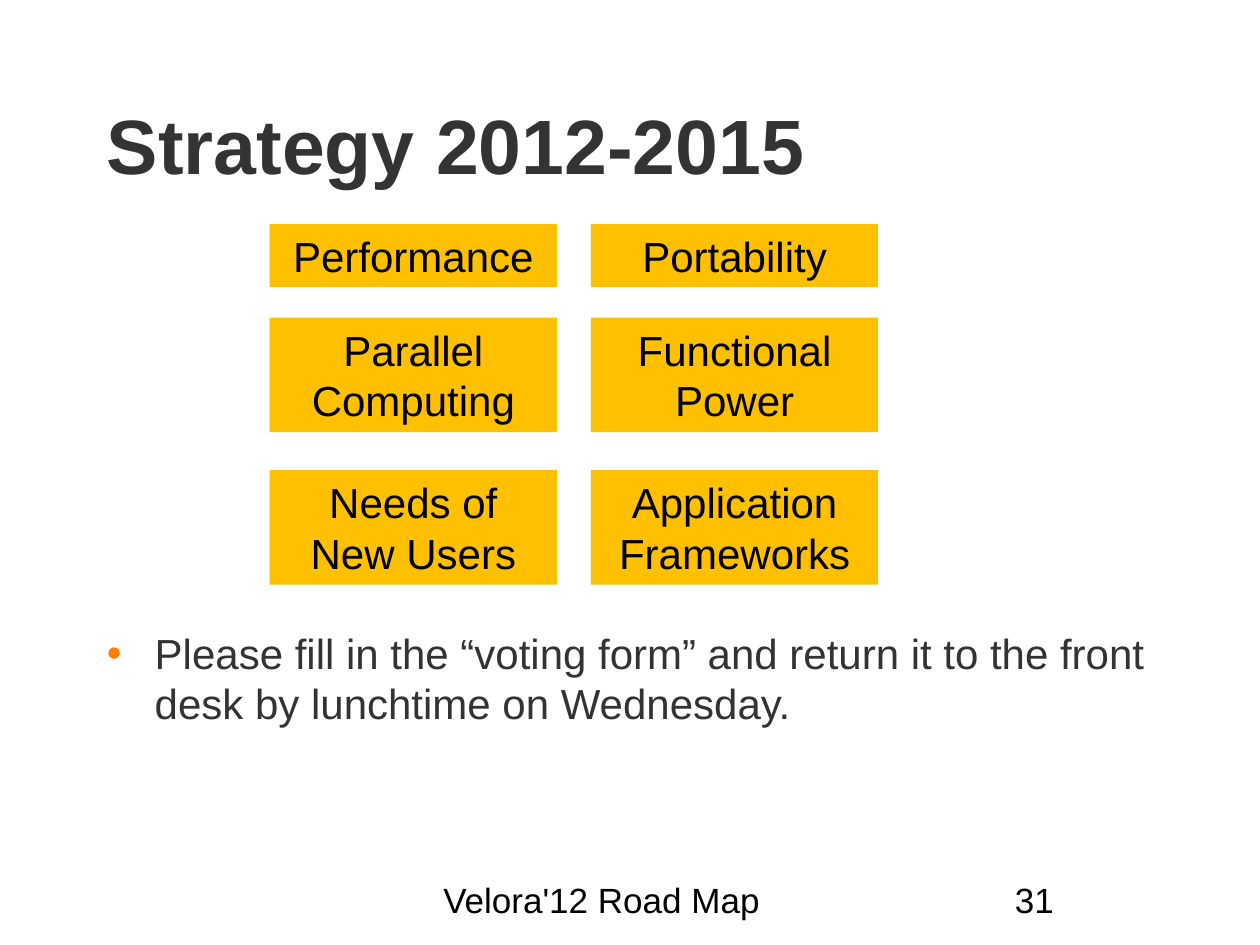
from lxml.etree import SubElement
from pptx import Presentation
from pptx.dml.color import RGBColor
from pptx.enum.shapes import MSO_SHAPE
from pptx.enum.text import MSO_ANCHOR, PP_ALIGN
from pptx.oxml.ns import qn
from pptx.util import Inches, Pt

# Content
TITLE = "Strategy 2012-2015"
GOAL_ROWS = [
    ("Performance", "Portability"),
    ("Parallel\vComputing", "Functional\vPower"),
    ("Needs of\vNew Users", "Application\vFrameworks"),
]
REQUEST = ("Please fill in the “voting form” and return it to the front "
           "desk by lunchtime on Wednesday.")
FOOTER = "Velora'12 Road Map"
PAGE_NUMBER = "31"

THEME = {
    "font": "Arial",
    "text": RGBColor(0x33, 0x33, 0x33),
    "dark": RGBColor(0, 0, 0),
    "tile": RGBColor(0xFF, 0xC0, 0x00),
    "bullet": "FF8000",
    "title_size": Pt(44),
    "body_size": Pt(24),
    "footer_size": Pt(20),
}

# Layout, in inches
MARGIN = 0.75
FOOTER_TOP, FOOTER_HEIGHT = 6.92, 0.5
TILE_LEFT, TILE_WIDTH, COLUMN_GAP = 2.14, 2.28, 0.27
TILE_ROWS = [(1.78, 0.5), (2.52, 0.91), (3.73, 0.91)]  # top, height
BULLET_INDENT = 0.38


def write(shape, text, size, color, align=PP_ALIGN.LEFT, bold=False,
          anchor=MSO_ANCHOR.TOP):
    frame = shape.text_frame
    frame.word_wrap = True
    frame.vertical_anchor = anchor
    paragraph = frame.paragraphs[0]
    paragraph.text = text
    paragraph.alignment = align
    formats = {"name": THEME["font"], "size": size, "bold": bold}
    for run in paragraph.runs:
        for attribute, value in formats.items():
            setattr(run.font, attribute, value)
        run.font.color.rgb = color
    return frame


def add_text(slide, box, *args, **kwargs):
    return write(slide.shapes.add_textbox(*map(Inches, box)), *args, **kwargs)


def add_tile(slide, box, label):
    tile = slide.shapes.add_shape(MSO_SHAPE.RECTANGLE, *map(Inches, box))
    tile.shadow.inherit = False
    tile.fill.solid()
    tile.fill.fore_color.rgb = THEME["tile"]
    tile.line.fill.background()
    write(tile, label, THEME["body_size"], THEME["dark"],
          PP_ALIGN.CENTER, anchor=MSO_ANCHOR.MIDDLE)


def add_bullet(paragraph):
    properties = paragraph._p.get_or_add_pPr()
    properties.set("marL", str(Inches(BULLET_INDENT)))
    properties.set("indent", str(-Inches(BULLET_INDENT)))
    color = SubElement(properties, qn("a:buClr"))
    SubElement(color, qn("a:srgbClr"), val=THEME["bullet"])
    SubElement(properties, qn("a:buFont"), typeface=THEME["font"])
    SubElement(properties, qn("a:buChar"), char="•")


def main():
    deck = Presentation()
    deck.slide_width, deck.slide_height = Inches(10), Inches(7.5)
    slide = deck.slides.add_slide(deck.slide_layouts[6])

    # Title
    title = add_text(slide, (MARGIN, 0.67, 8.5, 1.25), TITLE,
                     THEME["title_size"], THEME["text"], bold=True)
    title.margin_top = Inches(0.1)

    # Grid of goals
    for (top, height), labels in zip(TILE_ROWS, GOAL_ROWS):
        for column, label in enumerate(labels):
            left = TILE_LEFT + column * (TILE_WIDTH + COLUMN_GAP)
            add_tile(slide, (left, top, TILE_WIDTH, height), label)

    # Request to the audience
    request = add_text(slide, (MARGIN, 4.93, 8.66, 1.59), REQUEST,
                       THEME["body_size"], THEME["text"])
    add_bullet(request.paragraphs[0])

    # Footer and page number
    add_text(slide, (3.42, FOOTER_TOP, 3.17, FOOTER_HEIGHT), FOOTER,
             THEME["footer_size"], THEME["dark"])
    add_text(slide, (7.17, FOOTER_TOP, 2.08, FOOTER_HEIGHT), PAGE_NUMBER,
             THEME["footer_size"], THEME["dark"], PP_ALIGN.CENTER)

    deck.save("out.pptx")


if __name__ == "__main__":
    main()
